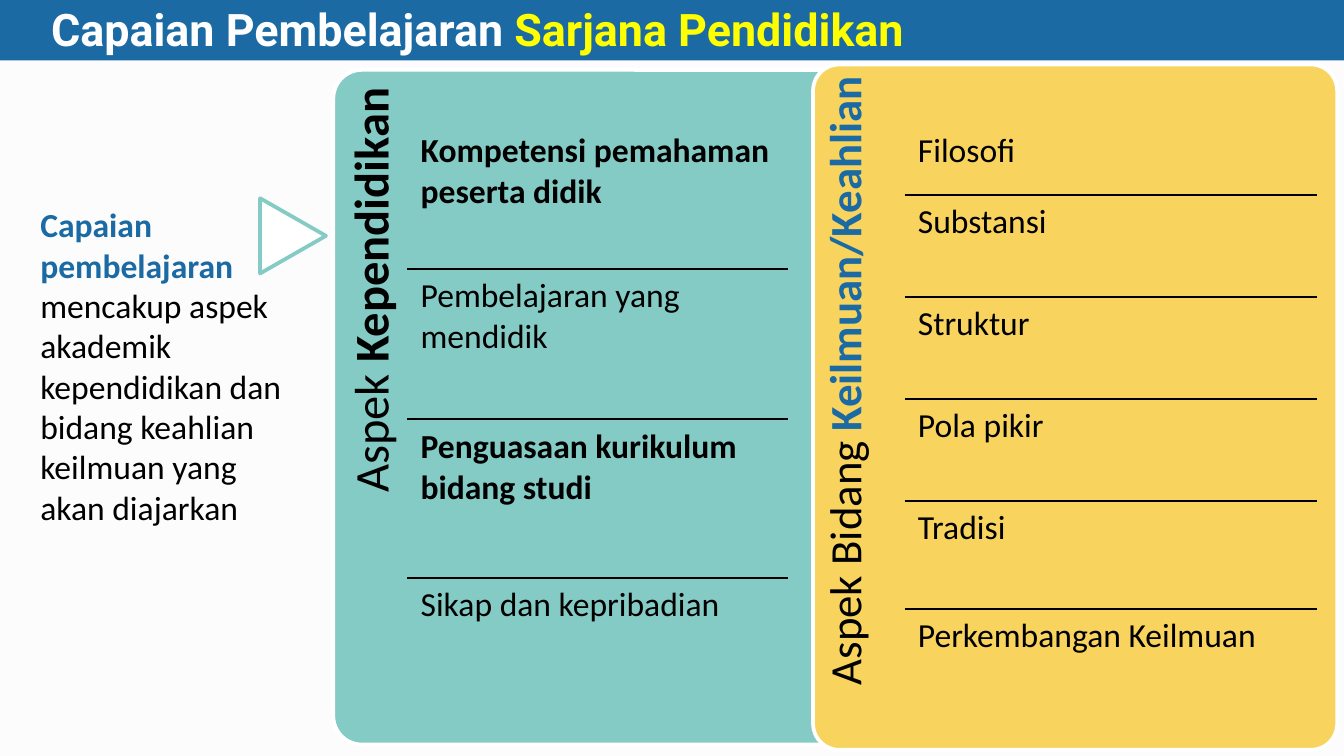
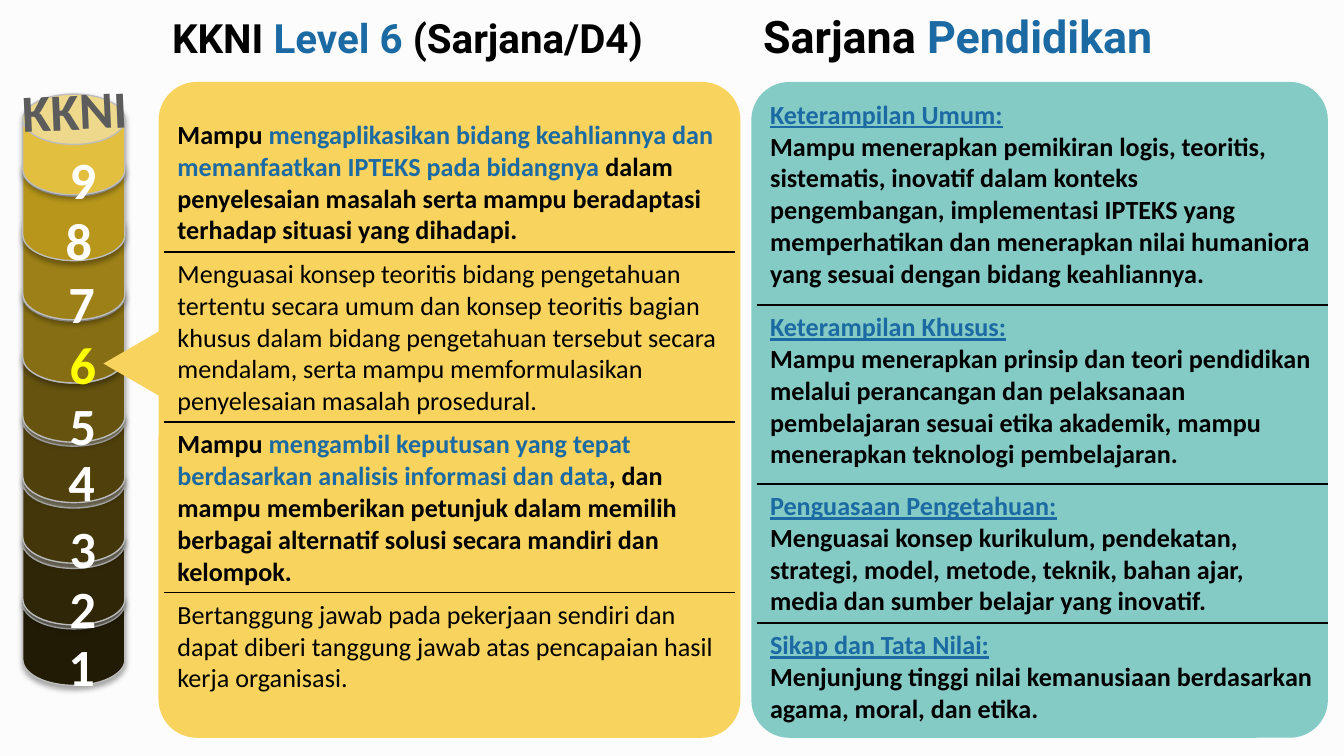
from lxml.etree import SubElement
from pptx import Presentation
from pptx.dml.color import RGBColor
from pptx.enum.shapes import MSO_SHAPE
from pptx.enum.text import MSO_ANCHOR, MSO_AUTO_SIZE, PP_ALIGN
from pptx.oxml.ns import qn
from pptx.util import Inches, Pt

# Shared look
BLUE, TEAL, GOLD = "1B6AA3", "84CBC5", "F8D35E"
BLACK, WHITE, YELLOW, PAPER = "000000", "FFFFFF", "FFFF00", "FCFCFC"
BODY_FONT, TITLE_FONT = "Calibri", "Roboto"
PLAIN_TABLE = "{2D5ABB26-0587-4C30-8999-92F81FD0307C}"

# Levels from bottom to top: can top, can height, colour, number left, number top
LEVELS = [
    (4.3, 0.8, "211B05", 0.41, 4.67),
    (3.85, 0.8, "2F2607", 0.42, 4.24),
    (3.4, 0.79, "42360A", 0.42, 3.79),
    (2.94, 0.8, "50410C", 0.41, 3.29),
    (2.47, 0.82, "65530F", 0.42, 2.88),
    (2.01, 0.84, "866E14", 0.42, 2.42),
    (1.51, 0.87, "9D8017", 0.41, 1.97),
    (1.08, 0.86, "B7961B", 0.39, 1.5),
    (0.7, 0.75, "E2BF3E", 0.42, 1.05),
]
CURRENT_LEVEL = 6

# Each run is (text, colour, bold, underlined)
EDUCATION_ASPECTS = [
    [[("Kompetensi pemahaman peserta didik", BLACK, True)]],
    [[("Pembelajaran yang mendidik", BLACK)]],
    [[("Penguasaan kurikulum bidang studi", BLACK, True)]],
    [[("Sikap dan kepribadian", BLACK)]],
]
EXPERTISE_ASPECTS = [
    [[(aspect, BLACK)]]
    for aspect in ("Filosofi", "Substansi", "Struktur", "Pola pikir",
                   "Tradisi", "Perkembangan Keilmuan")
]
LEVEL_6_ABILITIES = [
    [[("Mampu ", BLACK, True),
      ("mengaplikasikan bidang keahliannya dan memanfaatkan IPTEKS "
       "pada bidangnya ", BLUE, True),
      ("dalam penyelesaian masalah serta mampu beradaptasi terhadap "
       "situasi yang dihadapi.", BLACK, True)]],
    [[("Menguasai konsep teoritis bidang pengetahuan tertentu secara umum dan "
       "konsep teoritis bagian khusus dalam bidang pengetahuan tersebut secara "
       "mendalam, serta mampu memformulasikan penyelesaian masalah prosedural.",
       BLACK)]],
    [[("Mampu ", BLACK, True),
      ("mengambil keputusan yang tepat berdasarkan analisis informasi dan data",
       BLUE, True),
      (", dan mampu memberikan petunjuk dalam memilih berbagai alternatif "
       "solusi secara mandiri dan kelompok.", BLACK, True)]],
    [[("Bertanggung jawab pada pekerjaan sendiri dan dapat diberi tanggung "
       "jawab atas pencapaian hasil kerja organisasi.", BLACK)]],
]
GRADUATE_OUTCOMES = [
    [[(heading, BLUE, True, True)], [(outcome, BLACK, True)]]
    for heading, outcome in (
        ("Keterampilan Umum:",
         "Mampu menerapkan pemikiran logis, teoritis, sistematis, inovatif dalam "
         "konteks pengembangan, implementasi IPTEKS yang memperhatikan dan "
         "menerapkan nilai humaniora yang sesuai dengan bidang keahliannya."),
        ("Keterampilan Khusus:",
         "Mampu menerapkan prinsip dan teori pendidikan melalui perancangan dan "
         "pelaksanaan pembelajaran sesuai etika akademik, mampu menerapkan "
         "teknologi pembelajaran."),
        ("Penguasaan Pengetahuan:",
         "Menguasai konsep kurikulum, pendekatan, strategi, model, metode, "
         "teknik, bahan ajar, media dan sumber belajar yang inovatif."),
        ("Sikap dan Tata Nilai:",
         "Menjunjung tinggi nilai kemanusiaan berdasarkan agama, moral, dan etika."),
    )
]


def color(hex_code):
    return RGBColor.from_string(hex_code)


def inches(box):
    return [Inches(length) for length in box]


def place(item, box):
    item.left, item.top, item.width, item.height = inches(box)


def write(frame, paragraphs, size, font=BODY_FONT):
    for index, runs in enumerate(paragraphs):
        paragraph = frame.add_paragraph() if index else frame.paragraphs[0]
        for text, ink, *style in runs:
            bold, underlined = (style + [False, False])[:2]
            run = paragraph.add_run()
            run.text = text
            run.font.name, run.font.size = font, Pt(size)
            run.font.bold, run.font.underline = bold, underlined
            run.font.color.rgb = color(ink)


def add_text(shapes, box, runs, size, font=BODY_FONT, anchor=MSO_ANCHOR.TOP):
    text_box = shapes.add_textbox(*inches(box))
    frame = text_box.text_frame
    frame.word_wrap = True
    frame.vertical_anchor = anchor
    write(frame, [runs], size, font)
    return text_box


def add_figure(shapes, preset, box, fill, line=None, weight=2, adjust=None, turn=0):
    figure = shapes.add_shape(preset, *inches(box))
    figure.shadow.inherit = False
    figure.fill.solid()
    figure.fill.fore_color.rgb = color(fill)
    if line:
        figure.line.color.rgb = color(line)
        figure.line.width = Pt(weight)
    else:
        figure.line.fill.background()
    if adjust is not None:
        figure.adjustments[0] = adjust
    figure.rotation = turn
    return figure


def set_title(slide, box, runs, size):
    title = slide.shapes.title
    place(title, box)
    frame = title.text_frame
    frame.auto_size = MSO_AUTO_SIZE.NONE
    frame.vertical_anchor = MSO_ANCHOR.MIDDLE
    write(frame, [runs], size, TITLE_FONT)
    frame.paragraphs[0].alignment = PP_ALIGN.LEFT
    return title


def add_ruled_list(slide, box, row_heights, entries, size):
    """One-column table with a rule between neighbouring rows."""
    holder = slide.shapes.add_table(len(entries), 1, *inches(box))
    table = holder.table
    table.first_row = table.horz_banding = False
    table._tbl.tblPr.find(qn("a:tableStyleId")).text = PLAIN_TABLE
    for index, (height, paragraphs) in enumerate(zip(row_heights, entries)):
        table.rows[index].height = Inches(height)
        cell = table.cell(index, 0)
        cell.fill.background()
        write(cell.text_frame, paragraphs, size)
        if index < len(entries) - 1:
            properties = cell._tc.get_or_add_tcPr()
            rule = SubElement(properties, qn("a:lnB"), w=str(Pt(1)))
            ink = SubElement(rule, qn("a:solidFill"))
            SubElement(ink, qn("a:srgbClr"), val=BLACK)
            properties.insert(0, rule)
    # Row heights shrink the frame, so its box is set last
    place(holder, box)


def add_aspect_panel(slide, box, fill, label, size, length, depth, top_gap, end_gap):
    """Rounded panel whose label reads upwards along its left edge."""
    group = slide.shapes.add_group_shape()
    add_figure(group.shapes, MSO_SHAPE.ROUNDED_RECTANGLE, box, fill, WHITE, adjust=0.05)
    left, top = box[:2]
    label_box = (left + (depth - length) / 2, top + (length - depth) / 2, length, depth)
    heading = add_text(group.shapes, label_box, label, size)
    heading.rotation = 270
    frame = heading.text_frame
    frame.margin_left = frame.margin_bottom = 0
    frame.margin_top, frame.margin_right = Inches(top_gap), Inches(end_gap)
    paragraph = frame.paragraphs[0]
    paragraph.alignment = PP_ALIGN.RIGHT
    paragraph.line_spacing = 0.9


def add_soft_shadow(figure):
    effects = figure.element.spPr.find(qn("a:effectLst"))
    shadow = SubElement(effects, qn("a:outerShdw"), blurRad=str(Pt(3.1)),
                        dist=str(Pt(1.8)), dir="5400000", rotWithShape="0")
    ink = SubElement(shadow, qn("a:srgbClr"), val=BLACK)
    SubElement(ink, qn("a:alpha"), val="35000")


def add_level_column(slide, left, width):
    """Stack of cans, one per qualification level, with numbers in front."""
    shapes = slide.shapes.add_group_shape().shapes
    for top, height, fill, *_ in LEVELS:
        add_soft_shadow(add_figure(shapes, MSO_SHAPE.CAN, (left, top, width, height),
                                   fill, "BDBDBD", 0.75, 0.5))
    name = add_text(shapes, (left - 0.13, 0.53, width + 0.27, 0.57),
                    [("KKNI", "5C5C5C", True)], 28)
    name.rotation = 357.4
    name.text_frame.paragraphs[0].alignment = PP_ALIGN.CENTER
    for level, (*_, number_left, number_top) in enumerate(LEVELS, start=1):
        ink = YELLOW if level == CURRENT_LEVEL else WHITE
        add_text(shapes, (number_left, number_top, 0.31, 0.4),
                 [(str(level), ink, True)], 28)


def add_summary(slide, box, runs):
    summary = slide.placeholders[1]
    place(summary, box)
    summary.text_frame.auto_size = MSO_AUTO_SIZE.NONE
    write(summary.text_frame, [runs], 18)
    properties = summary.text_frame.paragraphs[0]._p.get_or_add_pPr()
    properties.set("marL", "0")
    properties.set("indent", "0")
    SubElement(properties, qn("a:buNone"))


def build_aspects_slide(prs):
    slide = prs.slides.add_slide(prs.slide_layouts[1])
    # Title on its band
    title = set_title(slide, (0.28, 0.02, 9.45, 0.38),
                      [("Capaian Pembelajaran ", WHITE, True),
                       ("Sarjana Pendidikan", YELLOW, True)], 24)
    band = add_figure(slide.shapes, MSO_SHAPE.RECTANGLE, (0, 0, 10, 0.45), BLUE)
    title.element.addprevious(band.element)
    # Summary and pointer
    add_summary(slide, (0.2, 1.47, 2.05, 2.91),
                [("Capaian pembelajaran ", BLUE, True),
                 ("mencakup aspek akademik kependidikan dan bidang keahlian "
                  "keilmuan yang akan diajarkan", BLACK)])
    add_figure(slide.shapes, MSO_SHAPE.FLOWCHART_EXTRACT, (1.9, 1.51, 0.56, 0.49),
               WHITE, TEAL, turn=90)
    # Two aspects
    add_aspect_panel(slide, (2.48, 0.52, 4.25, 5.02), TEAL,
                     [("Aspek ", BLACK), ("Kependidikan", BLACK, True)],
                     26, 4.11, 0.85, 0.1, 0.13)
    add_aspect_panel(slide, (6.05, 0.48, 3.9, 5.1), GOLD,
                     [("Aspek Bidang ", BLACK), ("Keilmuan/Keahlian", BLUE, True)],
                     24, 4.78, 0.78, 0.07, 0.09)
    add_ruled_list(slide, (3.03, 0.92, 2.83, 4.47), [1.08, 1.12, 1.18, 1.08],
                   EDUCATION_ASPECTS, 18)
    add_ruled_list(slide, (6.73, 0.92, 3.07, 4.33),
                   [0.53, 0.76, 0.76, 0.76, 0.8, 0.73], EXPERTISE_ASPECTS, 18)


def build_level_slide(prs):
    slide = prs.slides.add_slide(prs.slide_layouts[5])
    add_level_column(slide, 0.17, 0.76)
    # Headings
    set_title(slide, (1.18, 0.11, 4.53, 0.34),
              [("KKNI ", BLACK, True), ("Level 6 ", BLUE, True),
               ("(Sarjana/D4)", BLACK, True)], 21.6)
    add_text(slide.shapes, (5.58, -0.01, 4.02, 0.55),
             [("Sarjana ", BLACK, True), ("Pendidikan", BLUE, True)],
             24, TITLE_FONT, MSO_ANCHOR.MIDDLE)
    # Panels, the first pointing at the current level
    add_figure(slide.shapes, MSO_SHAPE.ISOSCELES_TRIANGLE, (0.72, 2.39, 0.73, 0.63),
               GOLD, turn=270)
    for left, width, fill in ((1.18, 4.33, GOLD), (5.59, 4.29, TEAL)):
        add_figure(slide.shapes, MSO_SHAPE.ROUNDED_RECTANGLE, (left, 0.61, width, 4.88),
                   fill, adjust=0.066)
    add_ruled_list(slide, (1.22, 0.84, 4.25, 4.49), [0.92, 1.12, 1.12, 0.92],
                   LEVEL_6_ABILITIES, 14)
    add_ruled_list(slide, (5.63, 0.69, 4.25, 4.76), [1.58, 1.33, 0.99, 0.81],
                   GRADUATE_OUTCOMES, 14)


def main():
    prs = Presentation()
    prs.slide_width = Inches(10)
    prs.slide_height = prs.slide_width * 9 // 16
    backdrop = prs.slide_master.background.fill
    backdrop.solid()
    backdrop.fore_color.rgb = color(PAPER)
    build_aspects_slide(prs)
    build_level_slide(prs)
    prs.save("out.pptx")


if __name__ == "__main__":
    main()
